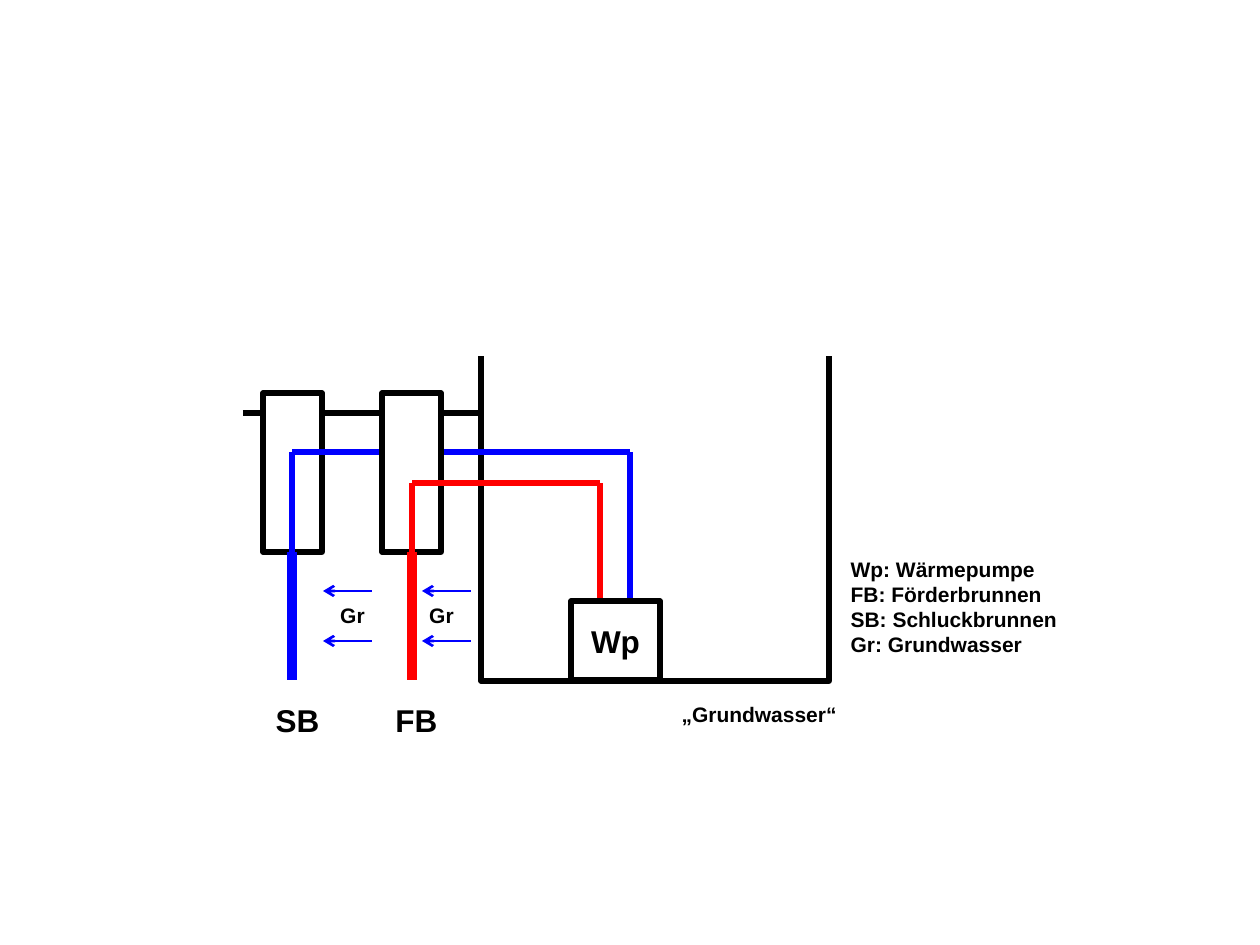
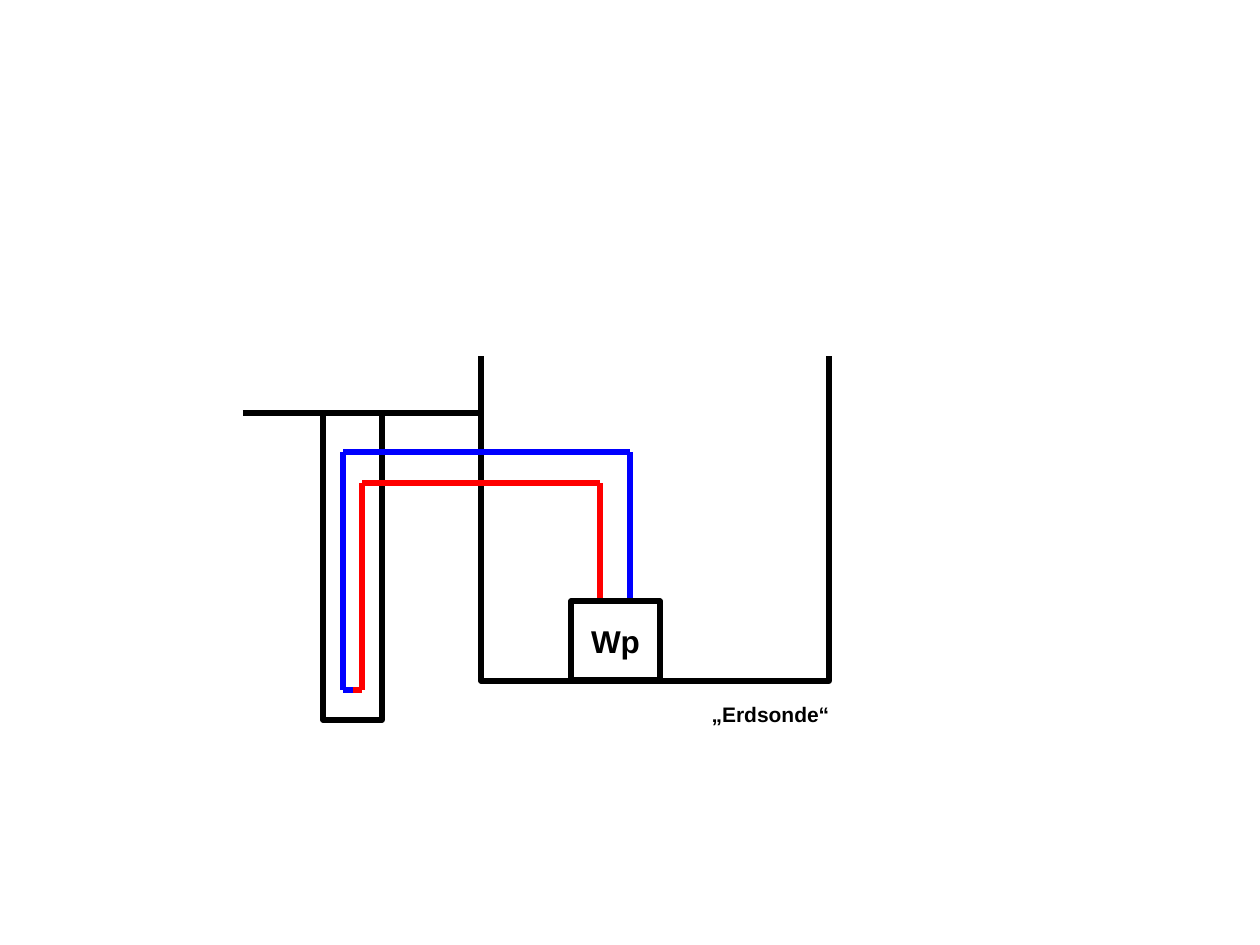
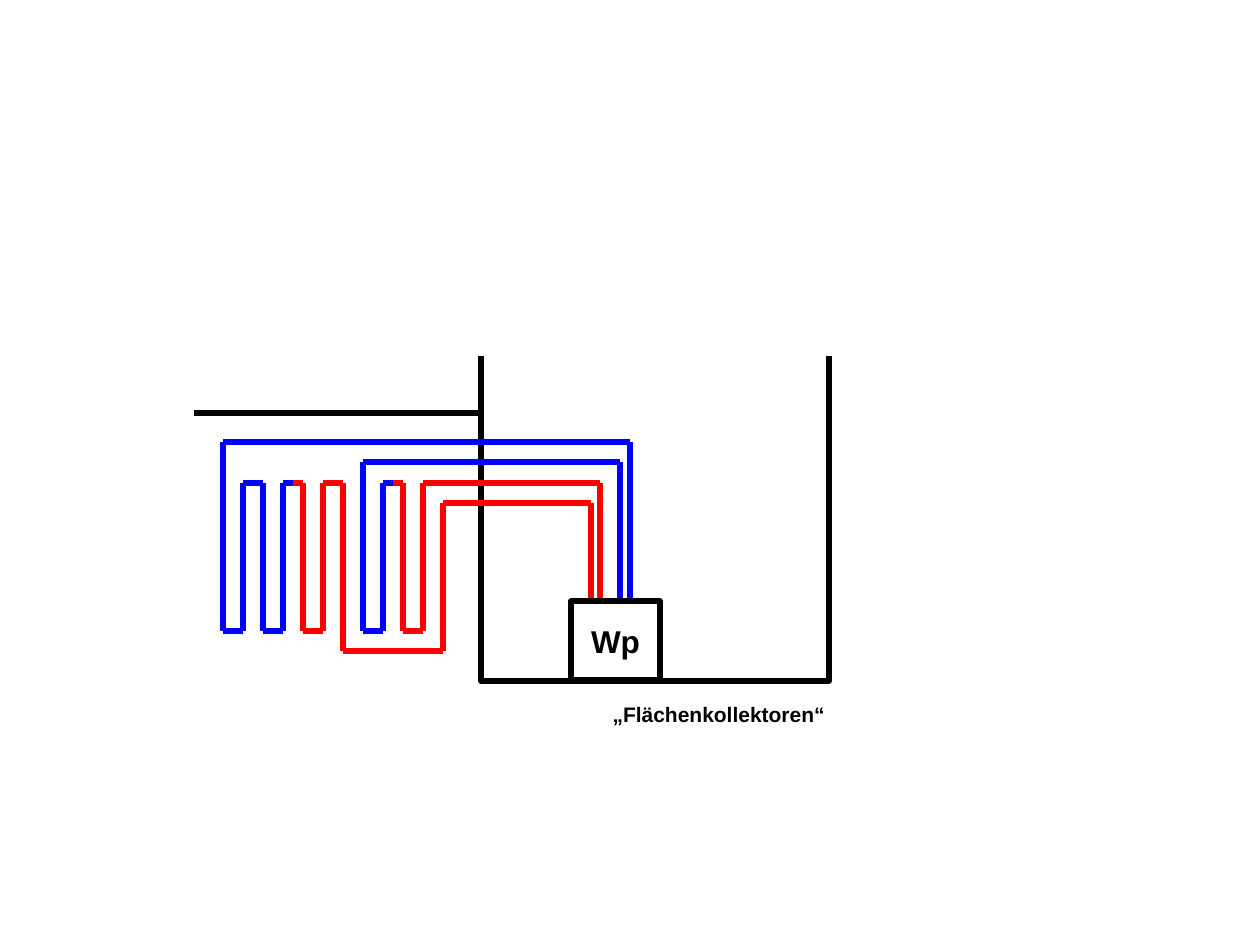
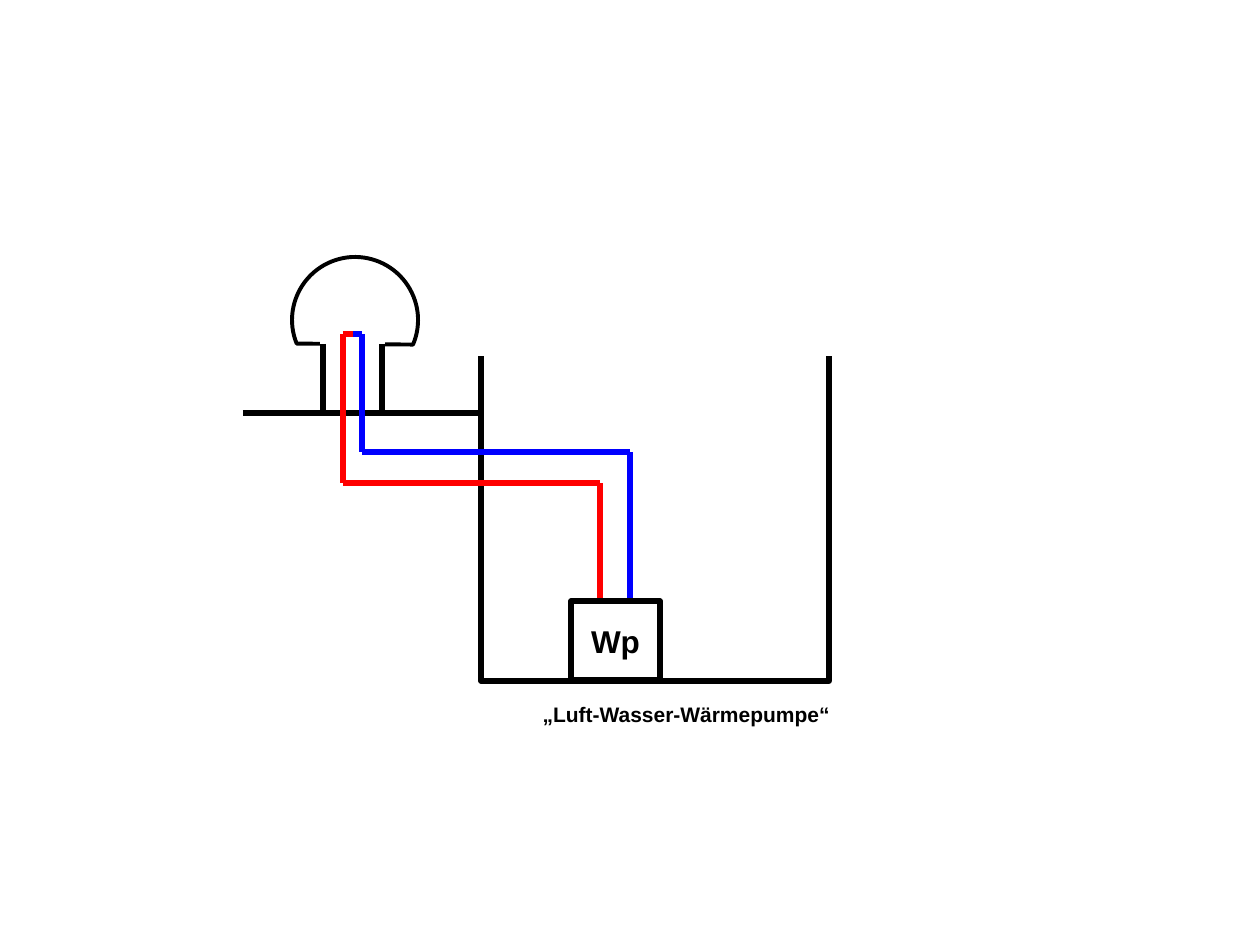
from dataclasses import dataclass

from lxml import etree
from pptx import Presentation
from pptx.dml.color import RGBColor
from pptx.enum.shapes import MSO_CONNECTOR, MSO_SHAPE
from pptx.enum.text import MSO_ANCHOR, MSO_AUTO_SIZE, PP_ALIGN
from pptx.oxml.ns import qn
from pptx.util import Pt

RECT, CHORD = MSO_SHAPE.RECTANGLE, MSO_SHAPE.CHORD
STRAIGHT = MSO_CONNECTOR.STRAIGHT
LEFT, CENTER = PP_ALIGN.LEFT, PP_ALIGN.CENTER
MIDDLE = MSO_ANCHOR.MIDDLE
NO_FIT = MSO_AUTO_SIZE.NONE

EMU_PER_PX = 914400 / 126


@dataclass(frozen=True)
class Theme:
    black: RGBColor = RGBColor(0, 0, 0)
    white: RGBColor = RGBColor(255, 255, 255)
    cold: RGBColor = RGBColor(0, 0, 255)
    warm: RGBColor = RGBColor(255, 0, 0)
    font: str = "Arial"
    label: int = 18
    note: int = 12
    pipe: float = 3
    riser: float = 6
    flow: float = 1.5


THEME = Theme()


def block(slide, box, edge, weight=THEME.pipe, lines=(), size=THEME.note,
          align=CENTER, kind=RECT, shape=None):
    """Style a white block with optional text; box is left, top, width, height."""
    left, top, width, height = (round(v * EMU_PER_PX) for v in box)
    if shape is None:
        shape = slide.shapes.add_shape(kind, left, top, width, height)
    else:
        shape.left, shape.top, shape.width, shape.height = left, top, width, height
    shape.shadow.inherit = False
    shape.fill.solid()
    shape.fill.fore_color.rgb = THEME.white
    shape.line.color.rgb = edge
    shape.line.width = Pt(weight)
    frame = shape.text_frame
    frame.word_wrap = True
    frame.auto_size = NO_FIT
    frame.vertical_anchor = MIDDLE
    for i, line in enumerate(lines):
        paragraph = frame.add_paragraph() if i else frame.paragraphs[0]
        paragraph.alignment = align
        paragraph.space_before = Pt(0)
        run = paragraph.add_run()
        run.text = line
        run.font.name = THEME.font
        run.font.size = Pt(size)
        run.font.bold = True
        run.font.color.rgb = THEME.black
    return shape


def route(slide, points, color, weight=THEME.pipe, arrow=False):
    """Join consecutive points with straight connectors."""
    for start, end in zip(points, points[1:]):
        ends = (round(v * EMU_PER_PX) for v in (*start, *end))
        segment = slide.shapes.add_connector(STRAIGHT, *ends)
        segment.line.color.rgb = color
        segment.line.width = Pt(weight)
        properties = segment._element.spPr
        if arrow:
            etree.SubElement(properties.find(qn("a:ln")), qn("a:tailEnd"), type="arrow")
        etree.SubElement(properties, qn("a:effectLst"))


prs = Presentation()
prs.slide_width = round(1260 * EMU_PER_PX)
prs.slide_height = round(945 * EMU_PER_PX)
TITLE_AND_BODY, TITLE_ONLY = prs.slide_layouts[1], prs.slide_layouts[5]

# Shared levels and pump connections
GROUND, COLD_Y, WARM_Y = 413, 452, 483
PUMP_TOP, FLOOR = 601, 680
COLD_X, WARM_X = 630, 600
cold_supply = [(COLD_X, PUMP_TOP), (COLD_X, COLD_Y)]
warm_return = [(WARM_X, PUMP_TOP), (WARM_X, WARM_Y)]

# Open-topped house, ground line and caption on every slide
systems = [
    (TITLE_AND_BODY, "„Grundwasser“", 669, 248, 243),
    (TITLE_ONLY, "„Erdsonde“", 699, 328, 243),
    (TITLE_ONLY, "„Flächenkollektoren“", 600, 328, 194),
    (TITLE_ONLY, "„Luft-Wasser-Wärmepumpe“", 530, 328, 243),
]
for layout, caption, caption_x, caption_w, ground_x in systems:
    slide = prs.slides.add_slide(layout)
    block(slide, (caption_x, 690, caption_w, 49), THEME.white, lines=[caption],
          align=LEFT, shape=slide.shapes.title)
    block(slide, (481, 324, 348, 357), THEME.black)
    block(slide, (422, 244, 476, 110), THEME.white, weight=2)
    route(slide, [(ground_x, GROUND), (481, GROUND)], THEME.black)
groundwater, probe, collectors, air = prs.slides

# Groundwater: absorption well (SB) and extraction well (FB)
SB_X, FB_X, WELL_BOTTOM = 292, 412, 552
block(groundwater, (263, 393, 59, 159), THEME.black)
route(groundwater, cold_supply + [(SB_X, COLD_Y), (SB_X, FLOOR)], THEME.cold)
block(groundwater, (382, 393, 59, 159), THEME.black)
for well, well_x in (("SB", 253), ("FB", 372)):
    block(groundwater, (well_x, FLOOR, 89, 79), THEME.white, lines=[well],
          size=THEME.label)
for water_x, arrow_x in ((323, 323), (412, 422)):
    block(groundwater, (water_x, 591, 59, 49), THEME.white, lines=["Gr"])
    for flow_y in (591, 641):
        route(groundwater, [(arrow_x + 49, flow_y), (arrow_x, flow_y)],
              THEME.cold, THEME.flow, arrow=True)
route(groundwater, warm_return + [(FB_X, WARM_Y), (FB_X, FLOOR)], THEME.warm)
for riser_x, color in ((SB_X, THEME.cold), (FB_X, THEME.warm)):
    route(groundwater, [(riser_x, FLOOR), (riser_x, WELL_BOTTOM)], color, THEME.riser)

# Groundwater: legend
legend = block(
    groundwater, (838, 532, 248, 149), THEME.white, align=LEFT,
    lines=["Wp: Wärmepumpe", "FB: Förderbrunnen", "SB: Schluckbrunnen",
           "Gr: Grundwasser"],
    shape=groundwater.placeholders[1])
for paragraph in legend.text_frame.paragraphs:
    properties = paragraph._p.get_or_add_pPr()
    properties.set("marL", "0")
    properties.set("indent", "0")
    etree.SubElement(properties, qn("a:buNone"))

# Ground probe: U-shaped pipe in a borehole
block(probe, (323, GROUND, 59, 307), THEME.black)
route(probe, warm_return + [(362, WARM_Y), (362, 690), (343, 690)], THEME.warm)
route(probe, cold_supply + [(343, COLD_Y), (343, 690), (353, 690)], THEME.cold)

# Surface collectors: two coils on an even grid
coil = [223 + 20 * i for i in range(12)]
TOP, BOTTOM, LOW = WARM_Y, 631, 651
route(collectors, [(coil[3], TOP), (coil[4], TOP), (coil[4], BOTTOM),
                   (coil[5], BOTTOM), (coil[5], TOP), (coil[6], TOP),
                   (coil[6], LOW), (coil[11], LOW), (coil[11], 503),
                   (591, 503), (591, PUMP_TOP)], THEME.warm)
route(collectors, [(coil[8], TOP), (coil[9], TOP), (coil[9], BOTTOM),
                   (coil[10], BOTTOM), (coil[10], TOP)] + warm_return[::-1],
      THEME.warm)
route(collectors, [(COLD_X, PUMP_TOP), (COLD_X, 442), (coil[0], 442),
                   (coil[0], BOTTOM), (coil[1], BOTTOM), (coil[1], TOP),
                   (coil[2], TOP), (coil[2], BOTTOM), (coil[3], BOTTOM),
                   (coil[3], TOP), (coil[3] + 10, TOP)], THEME.cold)
route(collectors, [(620, PUMP_TOP), (620, 462), (coil[7], 462),
                   (coil[7], BOTTOM), (coil[8], BOTTOM), (coil[8], TOP),
                   (coil[8] + 10, TOP)], THEME.cold)

# Air-to-water: domed intake with a duct
dome = block(air, (292, 257, 126, 126), THEME.black, weight=2.25, kind=CHORD)
dome.rotation = 113
block(air, (323, 294, 59, 109), THEME.white)
route(air, warm_return + [(343, WARM_Y), (343, 334), (362, 334)], THEME.warm)
route(air, cold_supply + [(362, COLD_Y), (362, 334), (353, 334)], THEME.cold)
for wall_x in (323, 382):
    route(air, [(wall_x, 344), (wall_x, GROUND)], THEME.black)

# Heat pump, in front of the pipe ends
for slide in prs.slides:
    block(slide, (571, PUMP_TOP, 89, 79), THEME.black, lines=["Wp"], size=THEME.label)

prs.save("out.pptx")
